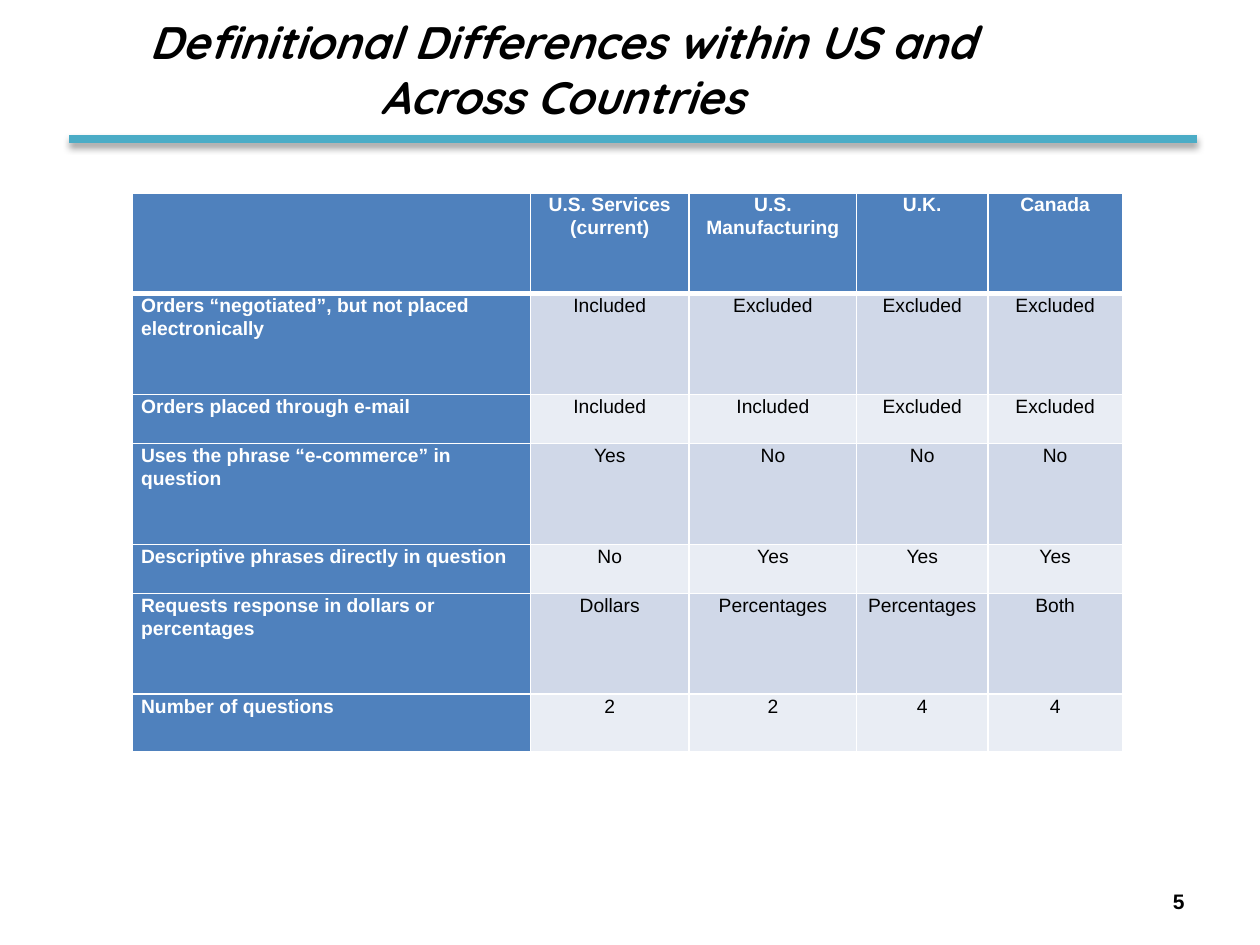
from lxml import etree
from pptx import Presentation
from pptx.dml.color import RGBColor
from pptx.enum.shapes import MSO_CONNECTOR
from pptx.enum.text import MSO_ANCHOR, PP_ALIGN
from pptx.oxml import parse_xml
from pptx.oxml.ns import nsdecls, qn
from pptx.util import Inches, Pt

LEFT, CENTER, RIGHT = PP_ALIGN.LEFT, PP_ALIGN.CENTER, PP_ALIGN.RIGHT
TOP, MIDDLE = MSO_ANCHOR.TOP, MSO_ANCHOR.MIDDLE
STRAIGHT = MSO_CONNECTOR.STRAIGHT

COLORS = {
    "text": "000000",
    "white": "FFFFFF",
    "header": "4F81BD",
    "band_dark": "D0D8E8",
    "band_light": "E9EDF4",
    "rule": "4BACC6",
}
COL_WIDTHS = [3.16, 1.26, 1.33, 1.04, 1.07]
ROW_HEIGHTS = [0.8, 0.8, 0.39, 0.8, 0.39, 0.8, 0.46]
ROWS = [
    ["", "U.S. Services (current)", "U.S. Manufacturing", "U.K.", "Canada"],
    ["Orders “negotiated”, but not placed electronically",
     "Included", "Excluded", "Excluded", "Excluded"],
    ["Orders placed through e-mail", "Included", "Included", "Excluded", "Excluded"],
    ["Uses the phrase “e-commerce” in question", "Yes", "No", "No", "No"],
    ["Descriptive phrases directly in question", "No", "Yes", "Yes", "Yes"],
    ["Requests response in dollars or percentages",
     "Dollars", "Percentages", "Percentages", "Both"],
    ["Number of questions", "2", "2", "4", "4"],
]


def rgb(name):
    return RGBColor.from_string(COLORS[name])


class SlideBuilder:
    """Holds the slide and its text style."""

    def __init__(self, s, font="Arial"):
        self.s = s
        self.font = font

    def add_run(self, p, text, size, color="text", bold=True, italic=False, font=None):
        r = p.add_run()
        r.text = text
        r.font.name = font or self.font
        r.font.size = Pt(size)
        r.font.bold = bold
        r.font.italic = italic
        r.font.color.rgb = rgb(color)

    def text(self, box, text, size, align, bottom=0.05, **style):
        sp = self.s.shapes.add_textbox(*map(Inches, box))
        tf = sp.text_frame
        tf.word_wrap = True
        tf.vertical_anchor = MIDDLE
        tf.margin_bottom = Inches(bottom)
        p = tf.paragraphs[0]
        p.alignment = align
        self.add_run(p, text, size, **style)

    def rule(self, x1, x2, y, width):
        """Draw a horizontal line with a soft shadow below it."""
        line = self.s.shapes.add_connector(
            STRAIGHT, Inches(x1), Inches(y), Inches(x2), Inches(y))
        line.line.color.rgb = rgb("rule")
        line.line.width = Pt(width)
        line._element.spPr.append(parse_xml(
            f'<a:effectLst {nsdecls("a")}><a:outerShdw blurRad="{Pt(4)}" dist="{Pt(3)}" '
            f'dir="5400000" rotWithShape="0"><a:srgbClr val="{COLORS["text"]}">'
            '<a:alpha val="40000"/></a:srgbClr></a:outerShdw></a:effectLst>'))

    def borders(self, cell, **widths):
        """Set white cell borders; widths in points, 1 unless given by side."""
        tcPr = cell._tc.get_or_add_tcPr()
        for i, side in enumerate("LRTB"):
            ln = etree.Element(qn(f"a:ln{side}"), w=str(Pt(widths.get(side, 1))))
            fill = etree.SubElement(ln, qn("a:solidFill"))
            etree.SubElement(fill, qn("a:srgbClr"), val=COLORS["white"])
            tcPr.insert(i, ln)

    def cell(self, cell, text, fill, color, bold, align):
        cell.fill.solid()
        cell.fill.fore_color.rgb = rgb(fill)
        cell.vertical_anchor = TOP
        cell.margin_left = cell.margin_right = Inches(0.07)
        cell.margin_top = cell.margin_bottom = 0
        if text:
            p = cell.text_frame.paragraphs[0]
            p.alignment = align
            p.line_spacing = 1.07
            self.add_run(p, text, 11, color, bold)

    def table(self, left, top, rows, widths, heights):
        table = self.s.shapes.add_table(
            len(rows), len(widths), Inches(left), Inches(top),
            Inches(sum(widths)), Inches(sum(heights))).table
        for col, width in zip(table.columns, widths):
            col.width = Inches(width)
        for row, height in zip(table.rows, heights):
            row.height = Inches(height)
        for i, row in enumerate(rows):
            band = "band_dark" if i % 2 else "band_light"
            edge = {0: {"B": 3}, 1: {"T": 3}}.get(i, {})
            for j, text in enumerate(row):
                head = i == 0 or j == 0
                cell = table.cell(i, j)
                self.cell(cell, text, "header" if head else band,
                          "white" if head else "text", head, CENTER if j else LEFT)
                self.borders(cell, **edge)


def main():
    prs = Presentation()
    prs.slide_width, prs.slide_height = Inches(10), Inches(7.5)
    b = SlideBuilder(prs.slides.add_slide(prs.slide_layouts[6]))
    b.text((0.59, -0.31, 7.75, 2.14),
           "Definitional Differences within US and Across Countries",
           26, CENTER, bottom=0.48, italic=True, font="Quicksand")
    b.table(1.05, 1.53, ROWS, COL_WIDTHS, ROW_HEIGHTS)
    b.text((7.17, 6.95, 2.33, 0.4), "5", 12, RIGHT)
    b.rule(0.55, 9.5, 1.1, 4.5)
    prs.save("out.pptx")


if __name__ == "__main__":
    main()
